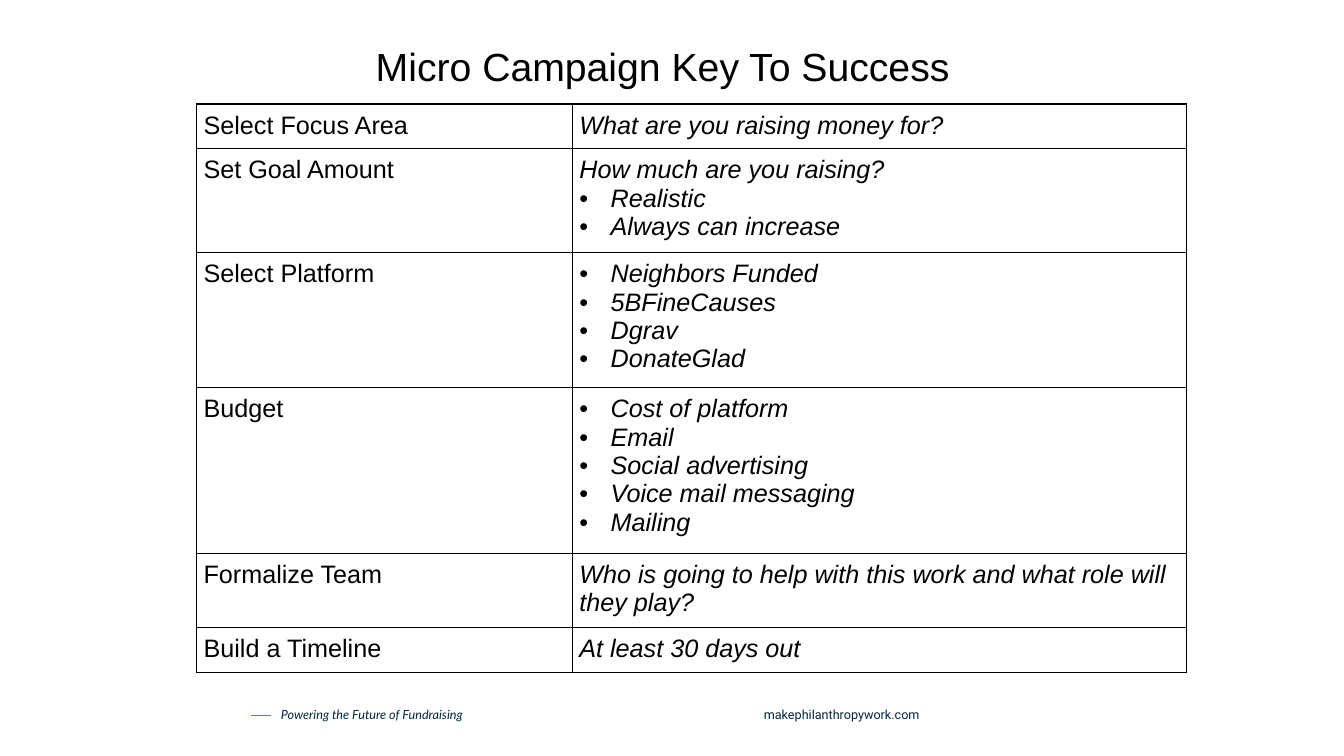
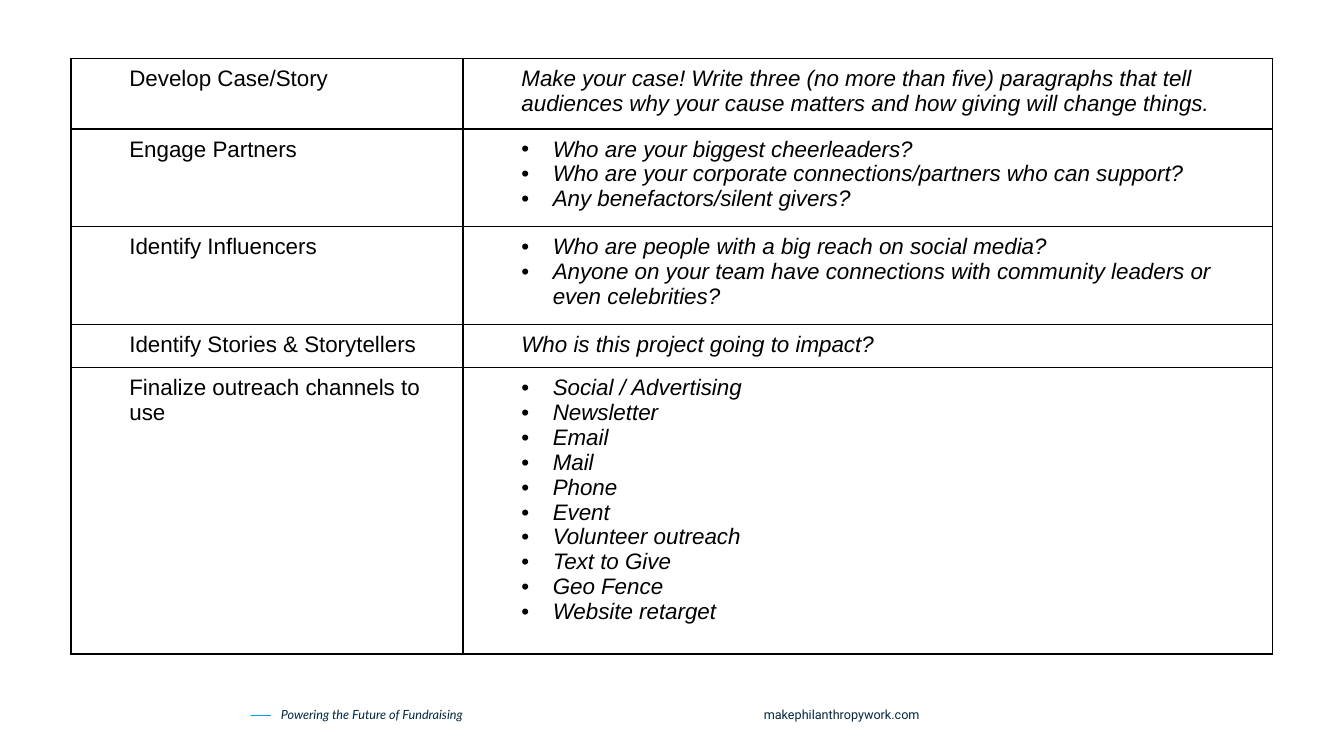
from lxml import etree
from pptx import Presentation
from pptx.dml.color import RGBColor
from pptx.enum.shapes import MSO_CONNECTOR
from pptx.oxml.ns import qn
from pptx.util import Cm, Pt

STRAIGHT = MSO_CONNECTOR.STRAIGHT
BLACK = RGBColor(0x00, 0x00, 0x00)
NAVY = RGBColor(0x02, 0x27, 0x3F)
BLUE = RGBColor(0x09, 0x9B, 0xFC)
BULLET = "•"
HANGING = Cm(0.79)

# Each row: height in cm, label, answer lines
CAMPAIGN_ROWS = [
    (1.13, "Select Focus Area", ["What are you raising money for?"]),
    (2.62, "Set Goal Amount",
     ["How much are you raising?", "• Realistic", "• Always can increase"]),
    (3.4, "Select Platform",
     ["• Neighbors Funded", "• 5BFineCauses", "• Dgrav", "• DonateGlad"]),
    (4.17, "Budget",
     ["• Cost of platform", "• Email", "• Social advertising",
      "• Voice mail messaging", "• Mailing"]),
    (1.88, "Formalize Team",
     ["Who is going to help with this work and what role will they play?"]),
    (1.13, "Build a Timeline", ["At least 30 days out"]),
]
OUTREACH_ROWS = [
    (1.78, "Develop Case/Story",
     ["Make your case! Write three (no more than five) paragraphs that tell "
      "audiences why your cause matters and how giving will change things."]),
    (2.46, "Engage Partners",
     ["• Who are your biggest cheerleaders?",
      "• Who are your corporate connections/partners who can support?",
      "• Any benefactors/silent givers?"]),
    (2.46, "Identify Influencers",
     ["• Who are people with a big reach on social media?",
      "• Anyone on your team have connections with community leaders or "
      "even celebrities?"]),
    (1.1, "Identify Stories & Storytellers",
     ["Who is this project going to impact?"]),
    (7.21, "Finalize outreach channels to use",
     ["• Social / Advertising", "• Newsletter", "• Email", "• Mail",
      "• Phone", "• Event", "• Volunteer outreach", "• Text to Give",
      "• Geo Fence", "• Website retarget"]),
]


class Deck:
    def __init__(self):
        self.prs = Presentation()
        self.prs.slide_width = Cm(33.87)
        self.prs.slide_height = Cm(19.05)
        self.s = None

    def add_slide(self):
        self.s = self.prs.slides.add_slide(self.prs.slide_layouts[6])
        self.footer()

    def style(self, p, size, font="Arial", color=BLACK, italic=False):
        for r in p.runs:
            r.font.name = font
            r.font.size = Pt(size)
            r.font.color.rgb = color
            r.font.italic = italic

    def text(self, text, left, top, width, height, size, **look):
        tf = self.s.shapes.add_textbox(
            Cm(left), Cm(top), Cm(width), Cm(height)).text_frame
        tf.word_wrap = True
        tf.text = text
        self.style(tf.paragraphs[0], size, **look)

    def line(self, x1, x2, y):
        sp = self.s.shapes.add_connector(
            STRAIGHT, Cm(x1), Cm(y), Cm(x2), Cm(y))
        sp.line.color.rgb = BLUE
        sp.line.width = Pt(0.5)
        etree.SubElement(sp._element.spPr, qn("a:effectLst"))

    def footer(self):
        self.text("Powering the Future of Fundraising", 6.83, 17.7, 8.03, 0.64,
                  9, font="Lato", color=NAVY, italic=True)
        self.line(6.83, 6.32, 18.03)
        self.text("makephilanthropywork.com", 19, 17.7, 4.85, 0.64,
                  9, font="Roboto", color=NAVY)

    def title(self, text):
        self.text(text, 9.22, 0.94, 15.42, 1.45, 28)

    def borders(self, cell):
        tc_pr = cell._tc.get_or_add_tcPr()
        for i, side in enumerate(("lnL", "lnR", "lnT", "lnB")):
            ln = etree.Element(qn("a:" + side), w=str(Pt(1)))
            fill = etree.SubElement(ln, qn("a:solidFill"))
            etree.SubElement(fill, qn("a:srgbClr"), val=str(BLACK))
            tc_pr.insert(i, ln)

    def cell(self, cell, lines, size, spacing, inset, indent, italic):
        cell.margin_left = cell.margin_right = Cm(inset)
        cell.margin_top = cell.margin_bottom = Cm(inset)
        cell.fill.background()
        self.borders(cell)
        tf = cell.text_frame
        tf.text = "\n".join(line.removeprefix(BULLET).strip() for line in lines)
        for p, line in zip(tf.paragraphs, lines):
            p.line_spacing = Pt(spacing)
            p_pr = p._p.get_or_add_pPr()
            bulleted = line.startswith(BULLET)
            hang = HANGING if bulleted else 0
            p_pr.set("marL", str(Cm(indent) + hang))
            p_pr.set("indent", str(-hang))
            if bulleted:
                etree.SubElement(p_pr, qn("a:buFont"), typeface="Arial")
                etree.SubElement(p_pr, qn("a:buChar"), char=BULLET)
            self.style(p, size, italic=italic)

    def table(self, rows, left, top, widths, size, spacing, inset, indent=0):
        heights = [height for height, _, _ in rows]
        table = self.s.shapes.add_table(
            len(rows), len(widths), Cm(left), Cm(top),
            Cm(sum(widths)), Cm(sum(heights))).table
        table.first_row = table.horz_banding = False
        for column, width in zip(table.columns, widths):
            column.width = Cm(width)
        for row, (height, label, answer) in zip(table.rows, rows):
            row.height = Cm(height)
            for cell, lines, italic in zip(
                    row.cells, ([label], answer), (False, True)):
                self.cell(cell, lines, size, spacing, inset, indent, italic)


def main():
    deck = Deck()
    deck.add_slide()
    deck.table(CAMPAIGN_ROWS, 4.95, 2.62, (9.47, 15.49),
               size=18, spacing=20.25, inset=0.18)
    deck.title("Micro Campaign Key To Success")

    deck.add_slide()
    deck.table(OUTREACH_ROWS, 1.79, 1.47, (9.88, 20.4),
               size=16, spacing=17.75, inset=0.2, indent=1.27)
    deck.prs.save("out.pptx")


if __name__ == "__main__":
    main()
